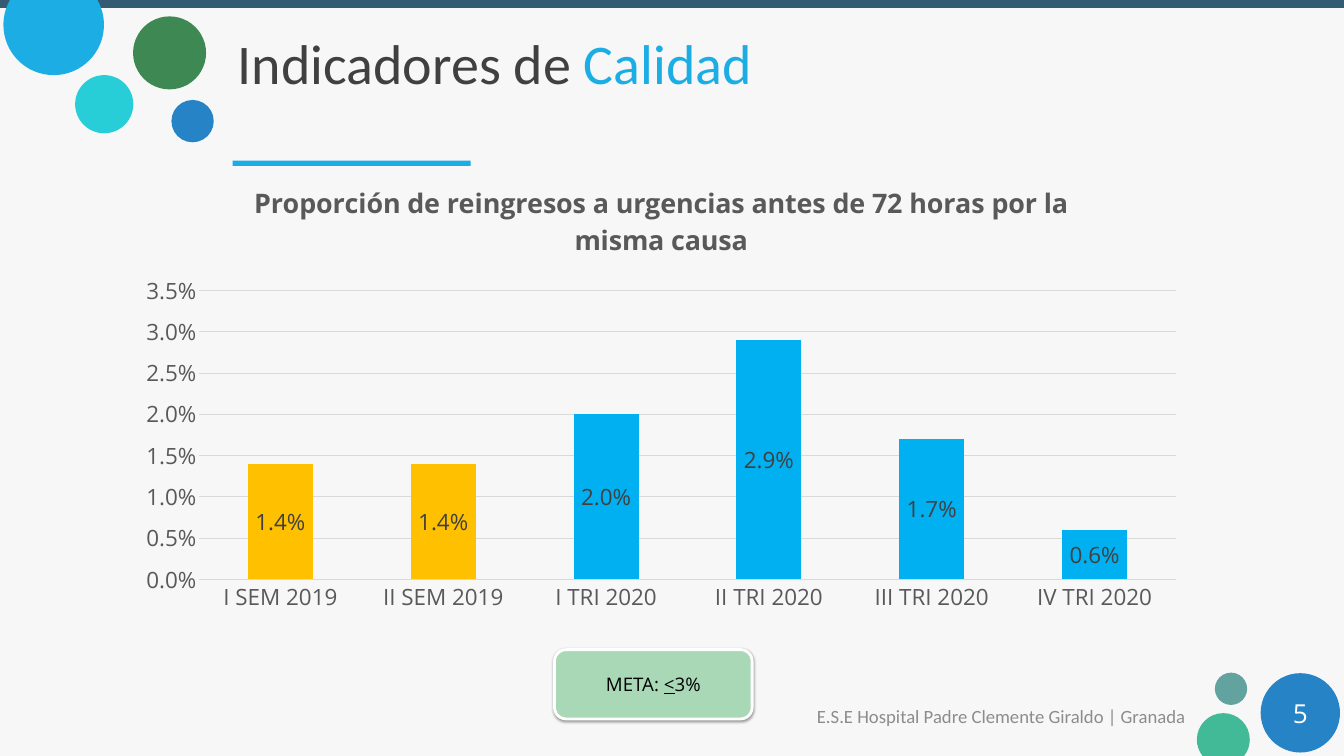
"""Build the quality indicators slide with its readmission chart."""
from dataclasses import dataclass
from itertools import pairwise
from math import asin, cos, degrees, radians, sin, tan

from lxml import etree
from pptx import Presentation
from pptx.chart.data import CategoryChartData
from pptx.dml.color import RGBColor
from pptx.enum.chart import XL_CHART_TYPE, XL_LABEL_POSITION, XL_TICK_MARK
from pptx.enum.shapes import MSO_SHAPE
from pptx.enum.text import MSO_ANCHOR, PP_ALIGN
from pptx.oxml import parse_xml
from pptx.oxml.ns import nsdecls, qn
from pptx.util import Cm, Pt

COLUMN_STACKED = XL_CHART_TYPE.COLUMN_STACKED
LABEL_CENTER = XL_LABEL_POSITION.CENTER
NO_TICK = XL_TICK_MARK.NONE
RECT, OVAL, ROUNDED = MSO_SHAPE.RECTANGLE, MSO_SHAPE.OVAL, MSO_SHAPE.ROUNDED_RECTANGLE
MIDDLE = MSO_ANCHOR.MIDDLE
LEFT, CENTER, RIGHT = PP_ALIGN.LEFT, PP_ALIGN.CENTER, PP_ALIGN.RIGHT

BACKGROUND = RGBColor(0xF7, 0xF7, 0xF7)
NAVY = RGBColor(0x33, 0x5B, 0x74)
SKY = RGBColor(0x1C, 0xAD, 0xE4)
BLUE = RGBColor(0x26, 0x83, 0xC6)
CYAN = RGBColor(0x27, 0xCE, 0xD7)
GREEN = RGBColor(0x3E, 0x88, 0x53)
TEAL = RGBColor(0x62, 0xA3, 0x9F)
MINT = RGBColor(0x42, 0xBA, 0x97)
PALE_GREEN = RGBColor(0xA9, 0xD8, 0xB7)
AMBER = RGBColor(0xFF, 0xC0, 0x00)
BAR_BLUE = RGBColor(0x00, 0xB0, 0xF0)
DARK = RGBColor(0x40, 0x40, 0x40)
GRAY = RGBColor(0x59, 0x59, 0x59)
FOOTER_GRAY = RGBColor(0x8C, 0x8C, 0x8C)
GRID_GRAY = RGBColor(0xD9, 0xD9, 0xD9)
BLACK = RGBColor(0, 0, 0)
WHITE = RGBColor(0xFF, 0xFF, 0xFF)

HEADING_FONT, BODY_FONT = "Calibri", "Open Sans"
SLIDE_W, SLIDE_H = 50.8, 28.58
CHART_TITLE = "Proporción de reingresos a urgencias antes de 72 horas por la misma causa"
PERCENT = "0.0%"


@dataclass
class Box:
    left: float
    top: float
    width: float
    height: float

    def lengths(self) -> tuple:
        return Cm(self.left), Cm(self.top), Cm(self.width), Cm(self.height)


@dataclass
class Bubble:
    x: float
    y: float
    radius: float
    color: RGBColor

    def point(self, angle: float, reach: float = 0) -> tuple:
        """Return a rim point, moved along its tangent by reach radii."""
        a = radians(angle)
        return (Cm(self.x + self.radius * (cos(a) - reach * sin(a))),
                Cm(self.y + self.radius * (sin(a) + reach * cos(a))))


@dataclass
class Span:
    text: str
    color: RGBColor
    underline: bool = False


@dataclass
class Bar:
    period: str
    value: float
    color: RGBColor


BUBBLES = [
    Bubble(7.28, 4.58, 0.8, BLUE),
    Bubble(2.03, 0.94, 1.9, SKY),
    Bubble(3.94, 3.94, 1.1, CYAN),
    Bubble(6.41, 2, 1.38, GREEN),
    Bubble(46.53, 26.04, 0.61, TEAL),
    Bubble(49.15, 26.95, 1.5, BLUE),
    Bubble(46.24, 27.96, 1, MINT),
]
BARS = [
    Bar("I SEM 2019", 0.014, AMBER),
    Bar("II SEM 2019", 0.014, AMBER),
    Bar("I TRI 2020", 0.02, BAR_BLUE),
    Bar("II TRI 2020", 0.029, BAR_BLUE),
    Bar("III TRI 2020", 0.017, BAR_BLUE),
    Bar("IV TRI 2020", 0.006, BAR_BLUE),
]


def paint(sp, color: RGBColor) -> None:
    sp.shadow.inherit = False
    sp.fill.solid()
    sp.fill.fore_color.rgb = color
    sp.line.fill.background()


def add_block(s, kind, box: Box, color: RGBColor):
    sp = s.shapes.add_shape(kind, *box.lengths())
    paint(sp, color)
    return sp


def add_cut_bubble(s, b: Bubble) -> None:
    """Draw a circle that ends in a chord on the nearer slide edge."""
    start, gap = (0, b.y) if b.y < b.radius else (180, SLIDE_H - b.y)
    cut = degrees(asin(gap / b.radius))
    angles = [start - cut, start, start + 90, start + 180, start + 180 + cut]
    points = []
    for first, last in pairwise(angles):
        reach = 4 / 3 * tan(radians(last - first) / 4)
        points += [b.point(first, reach), b.point(last, -reach), b.point(last)]
    builder = s.shapes.build_freeform(*b.point(angles[0]))
    builder.add_line_segments(points)
    sp = builder.convert_to_shape()
    paint(sp, b.color)
    outline = sp._element.spPr.find(".//" + qn("a:path"))
    lines = outline.findall(qn("a:lnTo"))[:len(points)]
    for i in range(0, len(lines), 3):
        curve = etree.SubElement(outline, qn("a:cubicBezTo"))
        lines[i].addprevious(curve)
        for line in lines[i:i + 3]:
            curve.append(line[0])
            outline.remove(line)


def add_bubble(s, b: Bubble) -> None:
    if b.radius <= b.y <= SLIDE_H - b.radius:
        side = 2 * b.radius
        add_block(s, OVAL, Box(b.x - b.radius, b.y - b.radius, side, side), b.color)
    else:
        add_cut_bubble(s, b)


def set_font(font, size: float, color: RGBColor, name: str = BODY_FONT) -> None:
    font.size, font.name = Pt(size), name
    font.color.rgb = color


def write(sp, spans: list[Span], size: float, name: str, align) -> None:
    tf = sp.text_frame
    tf.word_wrap, tf.vertical_anchor = True, MIDDLE
    tf.margin_left = tf.margin_right = Cm(0.46)
    tf.margin_top = tf.margin_bottom = Cm(0.23)
    p = tf.paragraphs[0]
    p.alignment = align
    for span in spans:
        r = p.add_run()
        r.text = span.text
        set_font(r.font, size, span.color, name)
        if span.underline:
            r.font.underline = True


def add_text(s, box: Box, spans: list[Span], size: float, name: str, align) -> None:
    write(s.shapes.add_textbox(*box.lengths()), spans, size, name, align)


def add_readmission_chart(s, box: Box) -> None:
    data = CategoryChartData(number_format=PERCENT)
    data.categories = [bar.period for bar in BARS]
    data.add_series(CHART_TITLE, [bar.value for bar in BARS])
    chart = s.shapes.add_chart(COLUMN_STACKED, *box.lengths(), data).chart
    set_font(chart.font, 24, BLACK)
    chart.has_legend = False
    chart.has_title = True
    p = chart.chart_title.text_frame.paragraphs[0]
    p.text = CHART_TITLE
    set_font(p.runs[0].font, 28.8, GRAY)
    p.runs[0].font.bold = True
    chart.chart_title.include_in_layout = False

    for axis in (chart.category_axis, chart.value_axis):
        axis.major_tick_mark = axis.minor_tick_mark = NO_TICK
        set_font(axis.tick_labels.font, 24, GRAY)
    chart.category_axis.format.line.color.rgb = GRID_GRAY
    chart.category_axis.format.line.width = Pt(1)
    values = chart.value_axis
    values.minimum_scale, values.maximum_scale, values.major_unit = 0, 0.035, 0.005
    values.tick_labels.number_format = PERCENT
    values.tick_labels.number_format_is_linked = False
    values.format.line.fill.background()
    values.major_gridlines.format.line.color.rgb = GRID_GRAY
    values.major_gridlines.format.line.width = Pt(0.75)

    plot = chart.plots[0]
    plot.vary_by_categories = False
    plot.gap_width, plot.overlap = 150, 100
    series = plot.series[0]
    for i, bar in enumerate(BARS):
        fill = series.points[i].format.fill
        fill.solid()
        fill.fore_color.rgb = bar.color
    labels = series.data_labels
    labels.show_value, labels.position = True, LABEL_CENTER
    labels.number_format, labels.number_format_is_linked = PERCENT, False
    set_font(labels.font, 24, DARK)


def add_goal(s, box: Box) -> None:
    sp = add_block(s, ROUNDED, box, PALE_GREEN)
    sp.line.color.rgb, sp.line.width = WHITE, Pt(3)
    sp._element.spPr.find(qn("a:effectLst")).append(parse_xml(
        f'<a:outerShdw {nsdecls("a")} blurRad="{Pt(3.1)}" dist="{Pt(1.6)}" dir="5400000" '
        'rotWithShape="0"><a:srgbClr val="000000"><a:alpha val="38000"/></a:srgbClr></a:outerShdw>'))
    spans = [Span("META: ", BLACK), Span("<", BLACK, True), Span("3%", BLACK)]
    write(sp, spans, 20, BODY_FONT, CENTER)


def main() -> None:
    prs = Presentation()
    prs.slide_width, prs.slide_height = Cm(SLIDE_W), Cm(SLIDE_H)
    s = prs.slides.add_slide(prs.slide_layouts[6])
    s.background.fill.solid()
    s.background.fill.fore_color.rgb = BACKGROUND
    add_block(s, RECT, Box(0, 0, SLIDE_W, 0.3), NAVY)
    for bubble in BUBBLES:
        add_bubble(s, bubble)
    add_block(s, RECT, Box(8.79, 6.07, 9, 0.2), SKY)
    footer = [Span("E.S.E Hospital Padre Clemente Giraldo | Granada", FOOTER_GRAY)]
    add_text(s, Box(29.19, 26.3, 16.08, 1.52), footer, 20, HEADING_FONT, RIGHT)
    add_text(s, Box(47.65, 26.21, 3, 1.52), [Span("5", WHITE)], 28, BODY_FONT, CENTER)
    title = [Span("Indicadores de ", DARK), Span("Calidad", SKY)]
    add_text(s, Box(8.53, 0.69, 39.85, 3.35), title, 60, HEADING_FONT, LEFT)
    add_readmission_chart(s, Box(4.72, 6.22, 40.54, 17.27))
    add_goal(s, Box(20.96, 24.56, 7.47, 2.62))
    prs.save("out.pptx")


if __name__ == "__main__":
    main()
